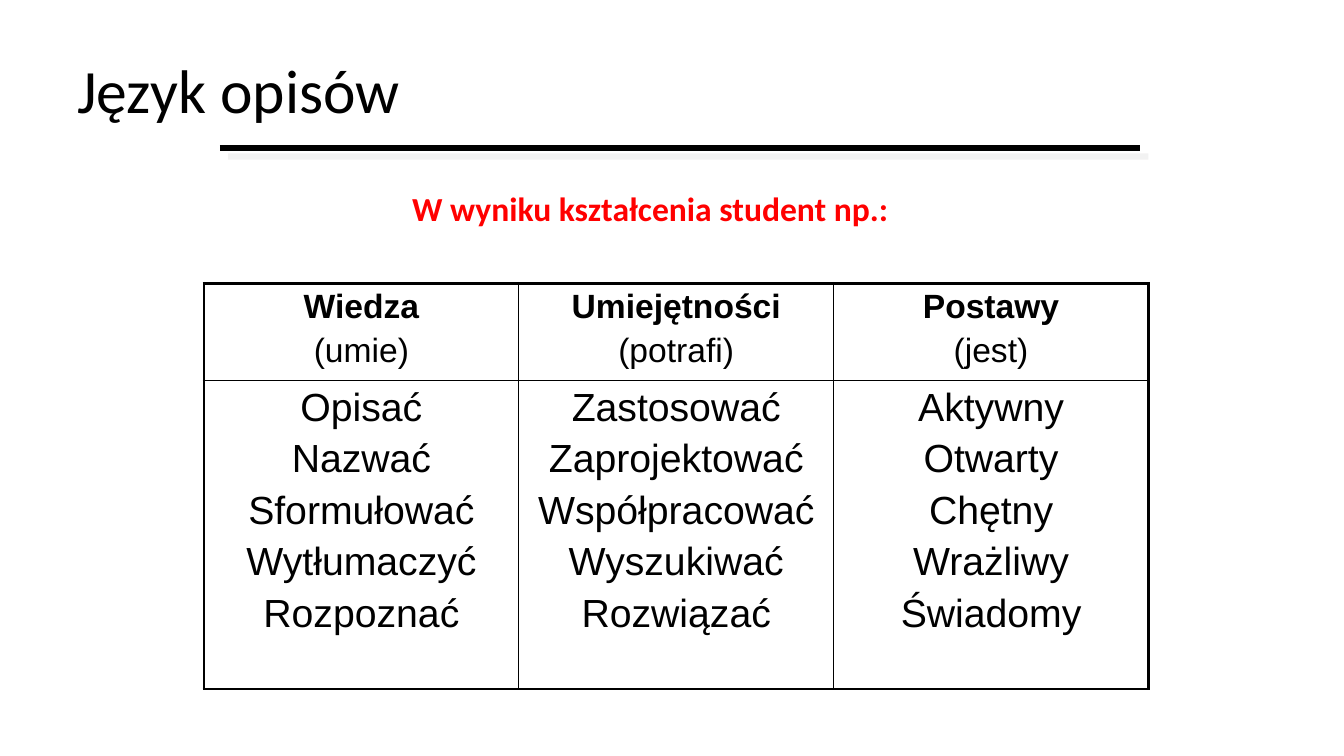
import pptx
import pptx.util
import pptx.dml.color
import pptx.enum.shapes
import pptx.enum.text
import pptx.oxml.ns
import lxml.etree

Pt = pptx.util.Pt
RGBColor = pptx.dml.color.RGBColor
PP_ALIGN = pptx.enum.text.PP_ALIGN
MSO_ANCHOR = pptx.enum.text.MSO_ANCHOR
qn = pptx.oxml.ns.qn

BLACK = RGBColor(0x00, 0x00, 0x00)
RED = RGBColor(0xFF, 0x00, 0x00)
SHADOW = RGBColor(0xE7, 0xE6, 0xE6)

OUTER, INNER = 2.25, 1

COLUMNS = [
    ("Wiedza", "(umie)",
     ["Opisać", "Nazwać", "Sformułować", "Wytłumaczyć", "Rozpoznać"]),
    ("Umiejętności", "(potrafi)",
     ["Zastosować", "Zaprojektować", "Współpracować", "Wyszukiwać", "Rozwiązać"]),
    ("Postawy", "(jest)",
     ["Aktywny", "Otwarty", "Chętny", "Wrażliwy", "Świadomy"]),
]


def add_element(parent, tag, **attrs):
    return lxml.etree.SubElement(
        parent, qn(tag), {k: str(v) for k, v in attrs.items()})


def style(p, size, name, color=BLACK, bold=False, align=PP_ALIGN.LEFT):
    p.alignment = align
    p.font.size = Pt(size)
    p.font.name = name
    p.font.bold = bold
    p.font.color.rgb = color


def set_title(s, text):
    sp = s.shapes.title
    sp.left, sp.top, sp.width, sp.height = Pt(48), Pt(21.6), Pt(864), Pt(90)
    tf = sp.text_frame
    tf.text = text
    tf.vertical_anchor = MSO_ANCHOR.MIDDLE
    p = tf.paragraphs[0]
    style(p, 44, "Calibri")
    p.line_spacing = 0.9


def add_lead(s, text):
    sp = s.shapes.add_textbox(Pt(287.3), Pt(134), Pt(448), Pt(41.8))
    tf = sp.text_frame
    tf.word_wrap = True
    tf.text = text
    p = tf.paragraphs[0]
    style(p, 24, "Calibri", RED, True)
    p.line_spacing = 0.9


def add_rule(s):
    y = Pt(105.8)
    sp = s.shapes.add_connector(
        pptx.enum.shapes.MSO_CONNECTOR.STRAIGHT, Pt(157), y, Pt(814.3), y)
    sp.line.color.rgb = BLACK
    sp.line.width = Pt(4.5)
    effects = add_element(sp._element.spPr, "a:effectLst")
    shadow = add_element(effects, "a:outerShdw", dist=int(Pt(8.5)),
                         dir=45 * 60000, algn="ctr", rotWithShape=0)
    color = add_element(shadow, "a:srgbClr", val=SHADOW)
    add_element(color, "a:alpha", val=50000)


def set_borders(cell, widths):
    tc_pr = cell._tc.get_or_add_tcPr()
    for i, (side, width) in enumerate(widths.items()):
        ln = add_element(tc_pr, "a:ln" + side, w=int(Pt(width)))
        fill = add_element(ln, "a:solidFill")
        add_element(fill, "a:srgbClr", val=BLACK)
        tc_pr.insert(i, ln)


def fill_cell(cell, lines, size, bold_first=False):
    cell.fill.background()
    tf = cell.text_frame
    tf.text = "\n".join(lines)
    for i, p in enumerate(tf.paragraphs):
        style(p, size, "Arial", bold=bold_first and i == 0,
              align=PP_ALIGN.CENTER)
        before = add_element(p._p.get_or_add_pPr(), "a:spcBef")
        add_element(before, "a:spcPct", val=20000)
        p._p.pPr.insert(0, before)


def add_outcomes(s):
    last = len(COLUMNS) - 1
    table = s.shapes.add_table(
        2, len(COLUMNS), Pt(145.7), Pt(202.3), Pt(674.7), Pt(283)).table
    table.first_row = table.horz_banding = False
    table.rows[0].height = Pt(62.7)
    table.rows[1].height = Pt(220.3)
    for c, (heading, verb, items) in enumerate(COLUMNS):
        fill_cell(table.cell(0, c), [heading, verb], 24, True)
        fill_cell(table.cell(1, c), items, 28)
        for r in range(2):
            set_borders(table.cell(r, c), {
                "L": OUTER if c == 0 else INNER,
                "R": OUTER if c == last else INNER,
                "T": OUTER if r == 0 else INNER,
                "B": OUTER if r == 1 else INNER,
            })


def main():
    prs = pptx.Presentation()
    prs.slide_width, prs.slide_height = Pt(960), Pt(540)
    s = prs.slides.add_slide(prs.slide_layouts[5])
    set_title(s, "Język opisów")
    add_lead(s, "W wyniku kształcenia student np.:")
    add_outcomes(s)
    add_rule(s)
    prs.save("out.pptx")


if __name__ == "__main__":
    main()
